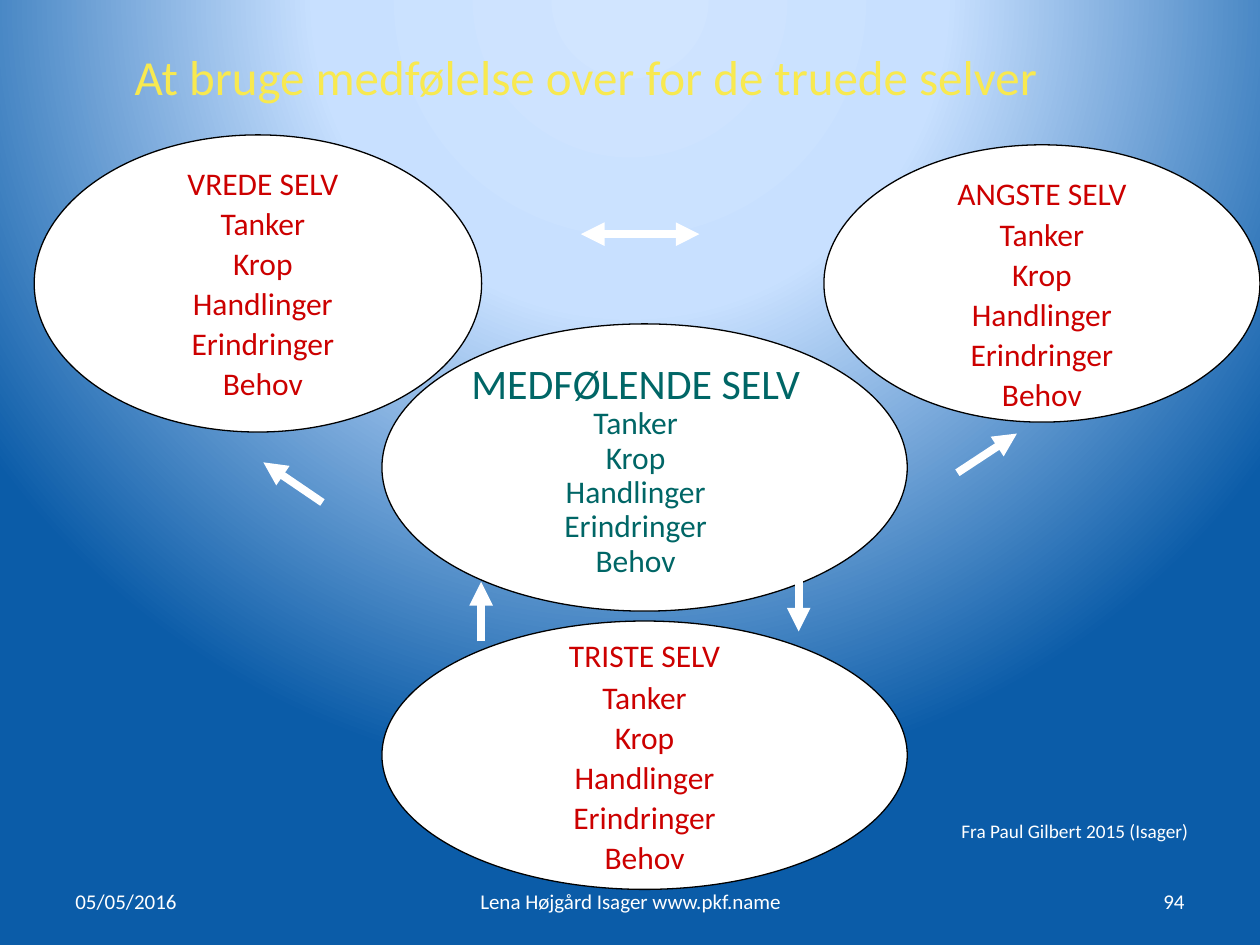
import pptx
import pptx.util
from lxml import etree
from pptx.dml.color import RGBColor
from pptx.enum.shapes import MSO_CONNECTOR, MSO_SHAPE
from pptx.enum.text import MSO_ANCHOR, MSO_AUTO_SIZE, PP_ALIGN
from pptx.oxml.ns import qn
from pptx.util import Cm, Pt

FONT = "Calibri"
WHITE = RGBColor(0xFF, 0xFF, 0xFF)
BLACK = RGBColor(0, 0, 0)
RED = RGBColor(0xCC, 0, 0)
TEAL = RGBColor(0, 0x66, 0x66)
YELLOW = RGBColor(0xF8, 0xE9, 0x50)
BACKGROUND = [(0, "D1E5FF"), (40, "C8E0FF"), (100, "0B5CA8")]

TITLE = "At bruge medfølelse over for de truede selver"
ASPECTS = ["Tanker", "Krop", "Handlinger", "Erindringer", "Behov"]

# Places are left, top, width, height in cm; "text" is a separate text box,
# without it the words sit inside the ellipse, "drop" cm below its centre line.
SELVES = [
    dict(name="VREDE SELV", oval=(0.69, 2.72, 9.02, 5.99),
         text=(0.79, 3.43, 9.02, 6.96), color=RED, size=18, spacing=0.65),
    dict(name="ANGSTE SELV", oval=(16.61, 2.92, 8.79, 5.59),
         drop=0.18, color=RED, size=18, spacing=0.65),
    dict(name="TRISTE SELV", oval=(7.7, 12.52, 10.59, 5.41),
         drop=0, color=RED, size=18, spacing=0.65),
    dict(name="MEDFØLENDE SELV", oval=(7.7, 6.53, 10.59, 5.79),
         text=(8.51, 7.52, 8.61, 5.38), color=TEAL, size=24, spacing=0.5),
]

# Start x, y, end x, end y in cm, and the ends that carry an arrowhead
ARROWS = [
    ((16.1, 11.53, 16.1, 12.73), ["tailEnd"]),
    ((9.7, 12.93, 9.7, 11.73), ["tailEnd"]),
    ((6.5, 10.13, 5.31, 9.32), ["tailEnd"]),
    ((19.3, 9.53, 20.5, 8.74), ["tailEnd"]),
    ((11.71, 4.72, 14.1, 4.72), ["headEnd", "tailEnd"]),
]

FOOTERS = [
    ("05/05/2016", 1.27, 5.92, PP_ALIGN.LEFT),
    ("Lena Højgård Isager www.pkf.name", 8.69, 8.05, PP_ALIGN.CENTER),
    ("94", 18.21, 5.92, PP_ALIGN.RIGHT),
]
SOURCE = "Fra Paul Gilbert 2015 (Isager)"


def cm(values):
    return [Cm(value) for value in values]


def style(para, size, color, align):
    para.alignment = align
    for span in para.runs:
        span.font.name = FONT
        span.font.size = Pt(size)
        span.font.color.rgb = color


def paint_background(page):
    """Radial gradient centred above the page."""
    fill = page.background.fill
    fill.gradient()
    grad = page.background._cSld.find(".//" + qn("a:gradFill"))
    for child in list(grad):
        grad.remove(child)
    stops = etree.SubElement(grad, qn("a:gsLst"))
    for percent, color in BACKGROUND:
        stop = etree.SubElement(stops, qn("a:gs"), pos=str(percent * 1000))
        etree.SubElement(stop, qn("a:srgbClr"), val=color)
    circle = etree.SubElement(grad, qn("a:path"))
    circle.set("path", "circle")
    etree.SubElement(circle, qn("a:fillToRect"),
                     l="50000", t="-80000", r="50000", b="180000")


def add_text(page, place, text, size, align):
    box = page.shapes.add_textbox(*cm(place))
    frame = box.text_frame
    frame.word_wrap = True
    frame.text = text
    style(frame.paragraphs[0], size, WHITE, align)
    return frame


def add_self(page, item):
    oval = page.shapes.add_shape(MSO_SHAPE.OVAL, *cm(item["oval"]))
    oval.shadow.inherit = False
    oval.fill.solid()
    oval.fill.fore_color.rgb = WHITE
    oval.line.color.rgb = BLACK
    oval.line.width = Pt(0.75)

    separate = "text" in item
    if separate:
        frame = page.shapes.add_textbox(*cm(item["text"])).text_frame
        frame.word_wrap = True
    else:
        frame = oval.text_frame
        frame.word_wrap = False
        frame.vertical_anchor = MSO_ANCHOR.MIDDLE
        frame.margin_top, frame.margin_bottom = Cm(2 * item["drop"]), 0

    frame.text = "\n".join([item["name"]] + ASPECTS)
    for index, para in enumerate(frame.paragraphs):
        style(para, 18 if index else item["size"], item["color"], PP_ALIGN.CENTER)
        if index:
            para.space_before = Pt(8.8)
        if index or separate:
            para.line_spacing = item["spacing"]


def add_arrow(page, ends, heads):
    arrow = page.shapes.add_connector(MSO_CONNECTOR.STRAIGHT, *cm(ends))
    arrow.line.color.rgb = WHITE
    arrow.line.width = Pt(4.5)
    line = arrow.line._get_or_add_ln()
    for head in heads:
        etree.SubElement(line, qn("a:" + head), type="triangle")
    etree.SubElement(arrow._element.spPr, qn("a:effectLst"))


def main():
    deck = pptx.Presentation()
    deck.slide_width, deck.slide_height = Cm(25.4), Cm(19.05)
    page = deck.slides.add_slide(deck.slide_layouts.get_by_name("Title Only"))
    paint_background(page)

    title = page.shapes.title
    title.left, title.top, title.width, title.height = cm((2.46, 0.81, 19.84, 1.45))
    frame = title.text_frame
    frame.text = TITLE
    frame.auto_size = MSO_AUTO_SIZE.NONE
    frame.vertical_anchor = MSO_ANCHOR.TOP
    style(frame.paragraphs[0], 28, YELLOW, PP_ALIGN.LEFT)

    for item in SELVES:
        add_self(page, item)
    for ends, heads in ARROWS:
        add_arrow(page, ends, heads)
    for text, left, width, align in FOOTERS:
        frame = add_text(page, (left, 17.65, width, 1.02), text, 12, align)
        frame.vertical_anchor = MSO_ANCHOR.MIDDLE

    frame = add_text(page, (19.28, 16.51, 4.85, 0.48), SOURCE, 11, PP_ALIGN.LEFT)
    frame.margin_left = frame.margin_right = Cm(0.1)
    frame.margin_top = frame.margin_bottom = 0

    deck.save("out.pptx")


if __name__ == "__main__":
    main()
